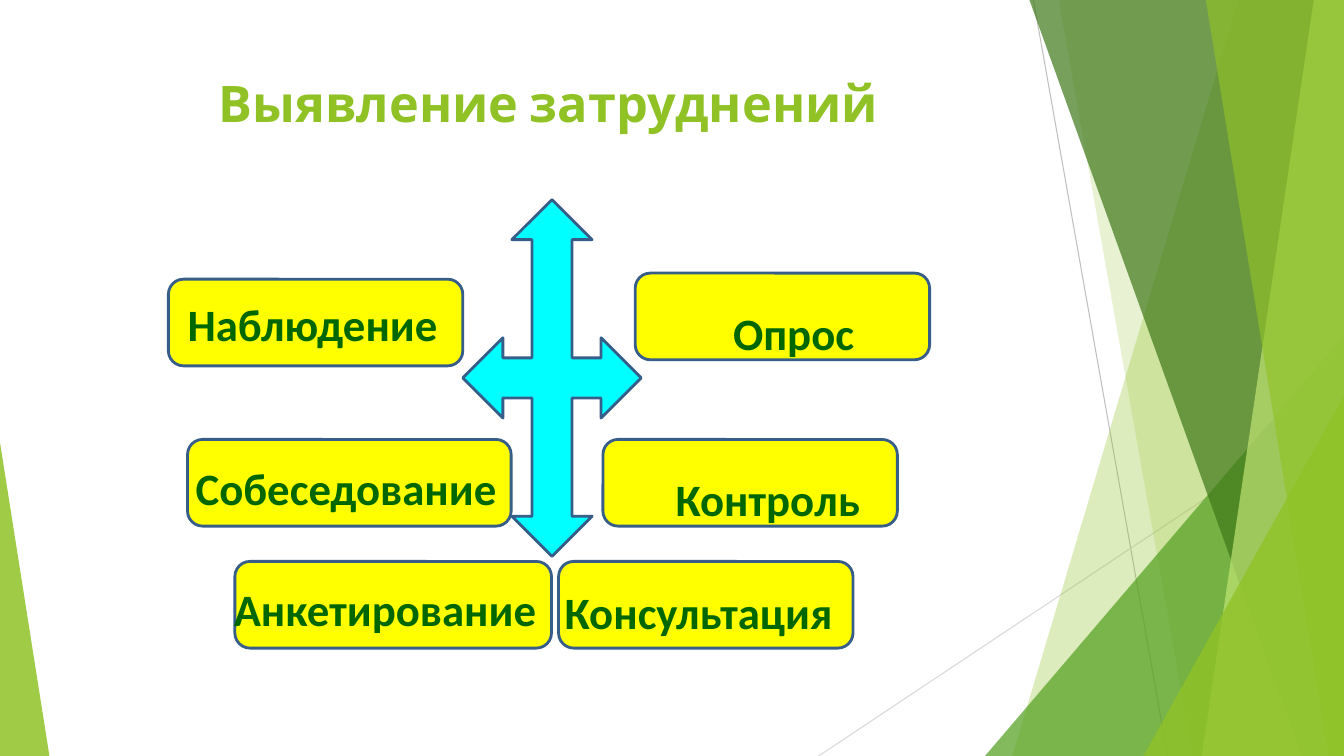
from lxml import etree
from pptx import Presentation
from pptx.dml.color import RGBColor
from pptx.enum.shapes import MSO_CONNECTOR, MSO_SHAPE
from pptx.enum.text import MSO_ANCHOR, PP_ALIGN
from pptx.oxml.ns import qn
from pptx.util import Inches, Pt

STRAIGHT = MSO_CONNECTOR.STRAIGHT
ROUNDED = MSO_SHAPE.ROUNDED_RECTANGLE
TRIANGLE = MSO_SHAPE.ISOSCELES_TRIANGLE
QUAD_ARROW = MSO_SHAPE.QUAD_ARROW
TOP = MSO_ANCHOR.TOP
LEFT, CENTER = PP_ALIGN.LEFT, PP_ALIGN.CENTER

WIDTH, HEIGHT = 13.33, 7.5
BOX_HEIGHT, BOX_RADIUS = 0.86, 0.15
COLORS = {
    "lime": "90C226", "green": "54A021", "dark": "3F7819", "pale": "C0E474",
    "gray": "BFBFBF", "light_gray": "D9D9D9", "yellow": "FFFF00",
    "cyan": "00FFFF", "outline": "375D89", "label": "006600",
}

# text, box left, top, width, label left, label top
METHODS = [
    ("Наблюдение", 1.67, 2.77, 2.92, 1.86, 2.91),
    ("Опрос", 6.3, 2.71, 2.92, 7.27, 3),
    ("Собеседование", 1.86, 4.36, 3.21, 1.94, 4.53),
    ("Контроль", 5.98, 4.36, 2.92, 6.7, 4.64),
    ("Анкетирование", 2.33, 5.57, 3.14, 2.32, 5.73),
    ("Консультация", 5.54, 5.57, 2.92, 5.6, 5.76),
]


def rgb(name):
    return RGBColor.from_string(COLORS[name])


def paint(shape, fill, opacity=100, line=None):
    """Set fill, transparency and outline, without a shadow."""
    shape.shadow.inherit = False
    shape.fill.solid()
    shape.fill.fore_color.rgb = rgb(fill)
    if opacity < 100:
        color = shape.fill._xPr.find(qn("a:solidFill"))[0]
        etree.SubElement(color, qn("a:alpha"), val=str(opacity * 1000))
    if line:
        shape.line.color.rgb = rgb(line)
        shape.line.width = Pt(2)
    else:
        shape.line.fill.background()


def add_preset(page, kind, left, top, width, height, adjustments):
    shape = page.shapes.add_shape(
        kind, Inches(left), Inches(top), Inches(width), Inches(height))
    for index, value in enumerate(adjustments):
        shape.adjustments[index] = value
    return shape


def add_thin_line(page, start, end, color):
    line = page.shapes.add_connector(
        STRAIGHT, *[Inches(value) for value in (*start, *end)])
    line.line.color.rgb = rgb(color)
    line.line.width = Pt(0.75)
    etree.SubElement(line._element.spPr, qn("a:effectLst"))


def add_panel(page, top_left, bottom_left, color, opacity):
    """Full-height panel that reaches the right edge of the slide."""
    builder = page.shapes.build_freeform(Inches(top_left), 0)
    corners = [(WIDTH, 0), (WIDTH, HEIGHT), (bottom_left, HEIGHT)]
    builder.add_line_segments([(Inches(x), Inches(y)) for x, y in corners])
    paint(builder.convert_to_shape(), color, opacity)


def add_corner(page, left, top, width, apex, color, opacity):
    """Right-angled triangle that stands on the bottom edge."""
    corner = add_preset(page, TRIANGLE, left, top, width, HEIGHT - top, [apex])
    paint(corner, color, opacity)


def write_text(frame, text, *, size, font, color, align=LEFT, spacing=None, after=0):
    frame.word_wrap = True
    frame.vertical_anchor = TOP
    para = frame.paragraphs[0]
    para.alignment = align
    para.space_after = Pt(after)
    if spacing:
        para.line_spacing = spacing
    span = para.add_run()
    span.text = text
    span.font.name = font
    span.font.size = Pt(size)
    span.font.bold = True
    span.font.color.rgb = rgb(color)


def add_method(page, text, left, top, width, label_left, label_top):
    box = add_preset(page, ROUNDED, left, top, width, BOX_HEIGHT,
                     [BOX_RADIUS / BOX_HEIGHT])
    paint(box, "yellow", line="outline")
    label = page.shapes.add_textbox(
        Inches(label_left), Inches(label_top), Inches(width + 0.1), Inches(0.47))
    frame = label.text_frame
    frame.margin_left = frame.margin_right = 0
    frame.margin_top = frame.margin_bottom = 0
    write_text(frame, text, size=32, font="Calibri", color="label",
               spacing=1.07, after=8)


def add_backdrop(page):
    add_thin_line(page, (10.25, 0), (11.58, HEIGHT), "gray")
    add_thin_line(page, (WIDTH, 4.03), (8.12, HEIGHT), "light_gray")
    add_panel(page, 12.28, 10.04, "lime", 30)
    add_panel(page, 10.5, 11.83, "lime", 20)
    add_corner(page, 9.77, 3.33, 3.56, 1, "green", 72)
    add_panel(page, 10.21, 12.91, "dark", 70)
    add_panel(page, 13.03, 11.92, "pale", 70)
    add_panel(page, 11.96, 13.18, "lime", 65)
    add_corner(page, 11.34, 3.93, 1.99, 1, "lime", 80)
    add_corner(page, 0, 4.39, 0.49, 0, "lime", 85)


def add_title(page, text):
    title = page.shapes.title
    title.left, title.top = Inches(0.74), Inches(0.67)
    title.width, title.height = Inches(9.4), Inches(1.44)
    write_text(title.text_frame, text, size=36, font="Cabin", color="lime",
               align=CENTER)


def main():
    deck = Presentation()
    deck.slide_width, deck.slide_height = Inches(WIDTH), Inches(HEIGHT)
    page = deck.slides.add_slide(deck.slide_layouts[5])

    add_backdrop(page)
    add_title(page, "Выявление затруднений")

    # Methods around the four-way arrow
    for method in METHODS:
        add_method(page, *method)
    arrow = add_preset(page, QUAD_ARROW, 4.59, 1.98, 1.77, 3.54, [0.225] * 3)
    paint(arrow, "cyan", line="outline")

    deck.save("out.pptx")


if __name__ == "__main__":
    main()
